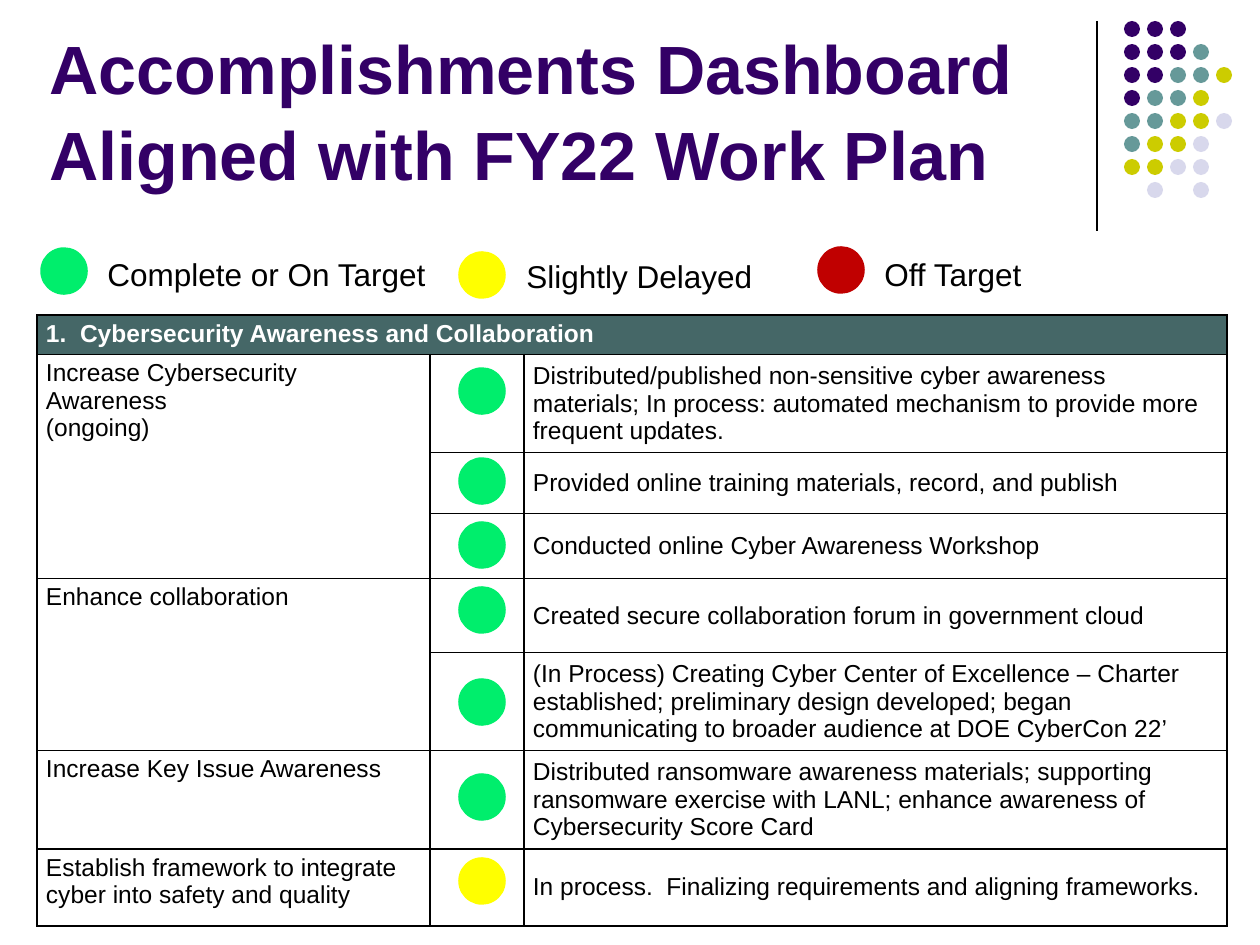
import pptx
import pptx.util
import pptx.dml.color
import pptx.enum.shapes
import pptx.enum.text
import pptx.oxml

PX = 914400 / 126
GREEN, YELLOW, RED = "00EE6C", "FFFF00", "C00000"
TITLE = "Accomplishments Dashboard Aligned with FY22 Work Plan"
HEAD = "1.  Cybersecurity Awareness and Collaboration"
LEGEND = [
    ("Complete or On Target", GREEN, 42, 249, 95, 249, 346),
    ("Slightly Delayed", YELLOW, 460, 253, 514, 251, 253),
    ("Off Target", RED, 819, 248, 872, 249, 164),
]
GOALS = [
    ("Increase Cybersecurity Awareness\n(ongoing)", [
        ("Distributed/published non-sensitive cyber awareness materials; In process: "
         "automated mechanism to provide more frequent updates.", GREEN, 96, 369),
        ("Provided online training materials, record, and publish", GREEN, 61, 459),
        ("Conducted online Cyber Awareness Workshop", GREEN, 65, 523),
    ]),
    ("Enhance collaboration", [
        ("Created secure collaboration forum in government cloud", GREEN, 74, 588),
        ("(In Process) Creating Cyber Center of Excellence – Charter established; "
         "preliminary design developed; began communicating to broader audience at "
         "DOE CyberCon 22’", GREEN, 96, 680),
    ]),
    ("Increase Key Issue Awareness", [
        ("Distributed ransomware awareness materials; supporting ransomware exercise "
         "with LANL; enhance awareness of Cybersecurity Score Card", GREEN, 92, 775),
    ]),
    ("Establish framework to integrate cyber into safety and quality", [
        ("In process.  Finalizing requirements and aligning frameworks.", YELLOW, 77, 859),
    ]),
]
COLS = [393, 94, 703]
HEAD_H = 38
DOTS = ["PPP", "PPPT", "PPTTY", "PTTY", "TTYYL", "TYYL", "YYLL", " L L"]
DOT_HUES = {"P": "330066", "T": "669999", "Y": "CCCC00", "L": "D8D8EC"}


def px(*nums):
    return [pptx.util.Emu(round(n * PX)) for n in nums]


def hue(code):
    return pptx.dml.color.RGBColor.from_string(code)


def style(frame, size, code="000000", bold=False):
    for para in frame.paragraphs:
        for run in para.runs:
            run.font.name = "Arial"
            run.font.size = pptx.util.Pt(size)
            run.font.bold = bold
            run.font.color.rgb = hue(code)


def disc(slide, x, y, size, code, edge=0):
    dot = slide.shapes.add_shape(pptx.enum.shapes.MSO_SHAPE.OVAL, *px(x, y, size, size))
    dot.shadow.inherit = False
    dot.fill.solid()
    dot.fill.fore_color.rgb = hue(code)
    if edge:
        dot.line.color.rgb = hue(code)
        dot.line.width = pptx.util.Pt(edge)
    else:
        dot.line.fill.background()


def motif(slide):
    rule = slide.shapes.add_connector(
        pptx.enum.shapes.MSO_CONNECTOR.STRAIGHT, *px(1097, 21, 1097, 231))
    rule.line.color.rgb = hue("000000")
    rule.line.width = pptx.util.Pt(0.75)
    rule._element.spPr.append(pptx.oxml.parse_xml(
        '<a:effectLst xmlns:a="http://schemas.openxmlformats.org/drawingml/2006/main"/>'))
    for r, row in enumerate(DOTS):
        for c, key in enumerate(row):
            if key in DOT_HUES:
                disc(slide, 1124 + 23 * c, 21 + 23 * r, 16, DOT_HUES[key])


def heading(slide):
    title = slide.shapes.title
    title.left, title.top, title.width, title.height = px(37, 136, 1086, 64)
    frame = title.text_frame
    frame.text = TITLE
    frame.word_wrap = True
    frame.auto_size = pptx.enum.text.MSO_AUTO_SIZE.NONE
    frame.vertical_anchor = pptx.enum.text.MSO_ANCHOR.BOTTOM
    frame.paragraphs[0].alignment = pptx.enum.text.PP_ALIGN.LEFT
    frame.paragraphs[0].line_spacing = 1.05
    style(frame, 39, "330066", True)


def legend(slide):
    for text, code, x, y, left, top, width in LEGEND:
        disc(slide, x, y, 44, code, 2)
        frame = slide.shapes.add_textbox(*px(left, top, width, 50)).text_frame
        frame.text = text
        frame.word_wrap = False
        style(frame, 18)


def border(cell):
    props = cell._tc.get_or_add_tcPr()
    for i, side in enumerate("LRTB"):
        props.insert(i, pptx.oxml.parse_xml(
            f'<a:ln{side} xmlns:a="http://schemas.openxmlformats.org/drawingml/2006/main" '
            'w="12700"><a:solidFill><a:srgbClr val="000000"/></a:solidFill>'
            f'</a:ln{side}>'))


def fill_cell(cell, text, code="000000", bold=False, mid=False):
    cell.text_frame.text = text
    style(cell.text_frame, 14, code, bold)
    if mid:
        cell.vertical_anchor = pptx.enum.text.MSO_ANCHOR.MIDDLE


def board(slide):
    heights = [HEAD_H] + [item[2] for _, items in GOALS for item in items]
    grid = slide.shapes.add_table(
        len(heights), len(COLS), *px(37, 315, sum(COLS), sum(heights))).table
    for col, width in zip(grid.columns, px(*COLS)):
        col.width = width
    for row, height in zip(grid.rows, px(*heights)):
        row.height = height
    for cell in grid.iter_cells():
        cell.margin_left, cell.margin_right = px(9, 9)
        cell.margin_top, cell.margin_bottom = px(5, 5)
        cell.fill.background()
        border(cell)
    head = grid.cell(0, 0)
    head.merge(grid.cell(0, 2))
    head.fill.solid()
    head.fill.fore_color.rgb = hue("456767")
    fill_cell(head, HEAD, "FFFFFF", True)
    row = 1
    for goal, items in GOALS:
        first = grid.cell(row, 0)
        if len(items) > 1:
            first.merge(grid.cell(row + len(items) - 1, 0))
        fill_cell(first, goal)
        for text, code, _, y in items:
            fill_cell(grid.cell(row, 2), text, mid=True)
            disc(slide, 460, y, 44, code, 2)
            row += 1


def main():
    deck = pptx.Presentation()
    deck.slide_width, deck.slide_height = px(1260, 945)
    slide = deck.slides.add_slide(deck.slide_layouts[5])
    motif(slide)
    heading(slide)
    legend(slide)
    board(slide)
    deck.save("out.pptx")


if __name__ == "__main__":
    main()
